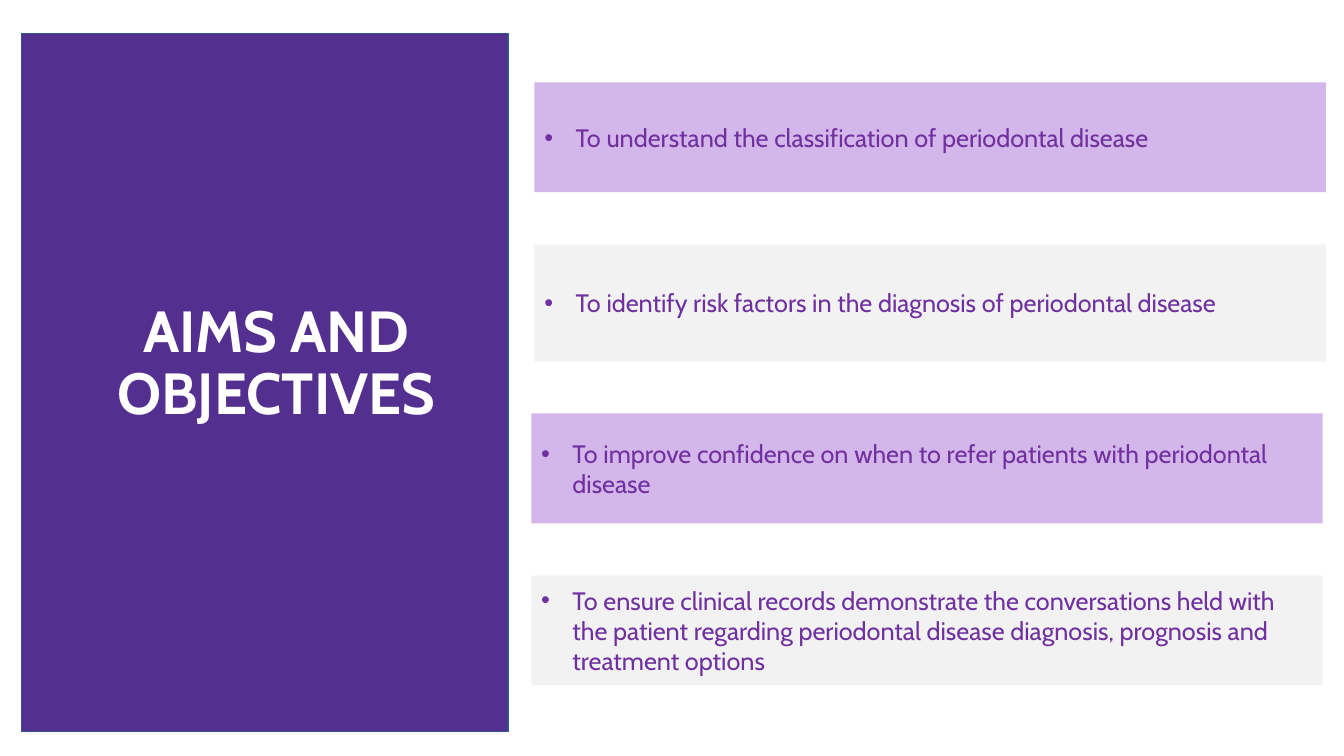
from lxml.etree import SubElement
from pptx import Presentation
from pptx.dml.color import RGBColor
from pptx.enum.shapes import MSO_SHAPE
from pptx.enum.text import MSO_ANCHOR, PP_ALIGN
from pptx.oxml.ns import qn
from pptx.util import Inches, Pt

WIDTH, HEIGHT = Inches(13.33), Inches(7.5)


def colour(hex_value):
    return RGBColor.from_string(hex_value)


def apply(target, values):
    for name, value in values.items():
        setattr(target, name, value)


class ObjectivesSlide:
    font = "Cabin"
    bullet_colour = "7030A0"
    indent = Inches(0.31)

    def __init__(self, deck):
        self.slide = deck.slides.add_slide(deck.slide_layouts[6])

    def place(self, left, top, width, height):
        return (
            round(WIDTH * left / 100),
            round(HEIGHT * top / 100),
            round(WIDTH * width / 100),
            round(HEIGHT * height / 100),
        )

    def panel(self, area, fill, outline=None):
        panel = self.slide.shapes.add_shape(MSO_SHAPE.RECTANGLE, *self.place(*area))
        panel.shadow.inherit = False
        panel.fill.solid()
        panel.fill.fore_color.rgb = colour(fill)
        if outline:
            panel.line.color.rgb = colour(outline)
            panel.line.width = Pt(1)
        else:
            panel.line.fill.background()
        return panel

    def set_words(self, frame, words, size, ink, frame_format, paragraph_format, bold=False):
        apply(frame, {"word_wrap": True, **frame_format})
        paragraph = frame.paragraphs[0]
        apply(paragraph, paragraph_format)
        run = paragraph.add_run()
        run.text = words
        apply(run.font, {"name": self.font, "size": Pt(size), "bold": bold})
        run.font.color.rgb = colour(ink)
        return paragraph

    def heading(self, area, words):
        heading = self.slide.shapes.add_textbox(*self.place(*area))
        self.set_words(
            heading.text_frame, words, 41.4, "FFFFFF",
            {"vertical_anchor": MSO_ANCHOR.TOP},
            {"alignment": PP_ALIGN.CENTER, "line_spacing": 0.9},
            bold=True,
        )

    def objective(self, area, fill, words):
        band = self.panel(area, fill)
        sides = ("left", "top", "right", "bottom")
        margins = {f"margin_{side}": Inches(0.1) for side in sides}
        paragraph = self.set_words(
            band.text_frame, words, 18, self.bullet_colour,
            {"vertical_anchor": MSO_ANCHOR.MIDDLE, **margins},
            {"alignment": PP_ALIGN.LEFT},
        )
        self.bullet(paragraph)

    def bullet(self, paragraph):
        properties = paragraph._p.get_or_add_pPr()
        properties.set("marL", str(self.indent))
        properties.set("indent", str(-self.indent))
        tint = SubElement(properties, qn("a:buClr"))
        SubElement(tint, qn("a:srgbClr"), val=self.bullet_colour)
        SubElement(properties, qn("a:buFont"), typeface="Arial")
        SubElement(properties, qn("a:buChar"), char="•")


def main():
    deck = Presentation()
    apply(deck, {"slide_width": WIDTH, "slide_height": HEIGHT})
    aims = ObjectivesSlide(deck)
    aims.panel((1.58, 4.4, 36.23, 92.4), "533090", outline="31538F")
    aims.heading((4.88, 39.33, 31.36, 21.2), "AIMS AND OBJECTIVES")

    lilac, grey = "D3B6EA", "F2F2F2"
    objectives = [
        (39.76, 14.53, lilac, "To understand the classification of periodontal disease"),
        (39.76, 15.47, grey, "To identify risk factors in the diagnosis of periodontal disease"),
        (39.53, 14.53, lilac, "To improve confidence on when to refer patients with periodontal disease"),
        (39.53, 14.53, grey, "To ensure clinical records demonstrate the conversations held with "
         "the patient regarding periodontal disease diagnosis, prognosis and treatment options"),
    ]
    top, gap = 10.9, 6.9
    for left, height, fill, words in objectives:
        aims.objective((left, top, 58.89, height), fill, words)
        top += height + gap

    deck.save("out.pptx")


if __name__ == "__main__":
    main()
